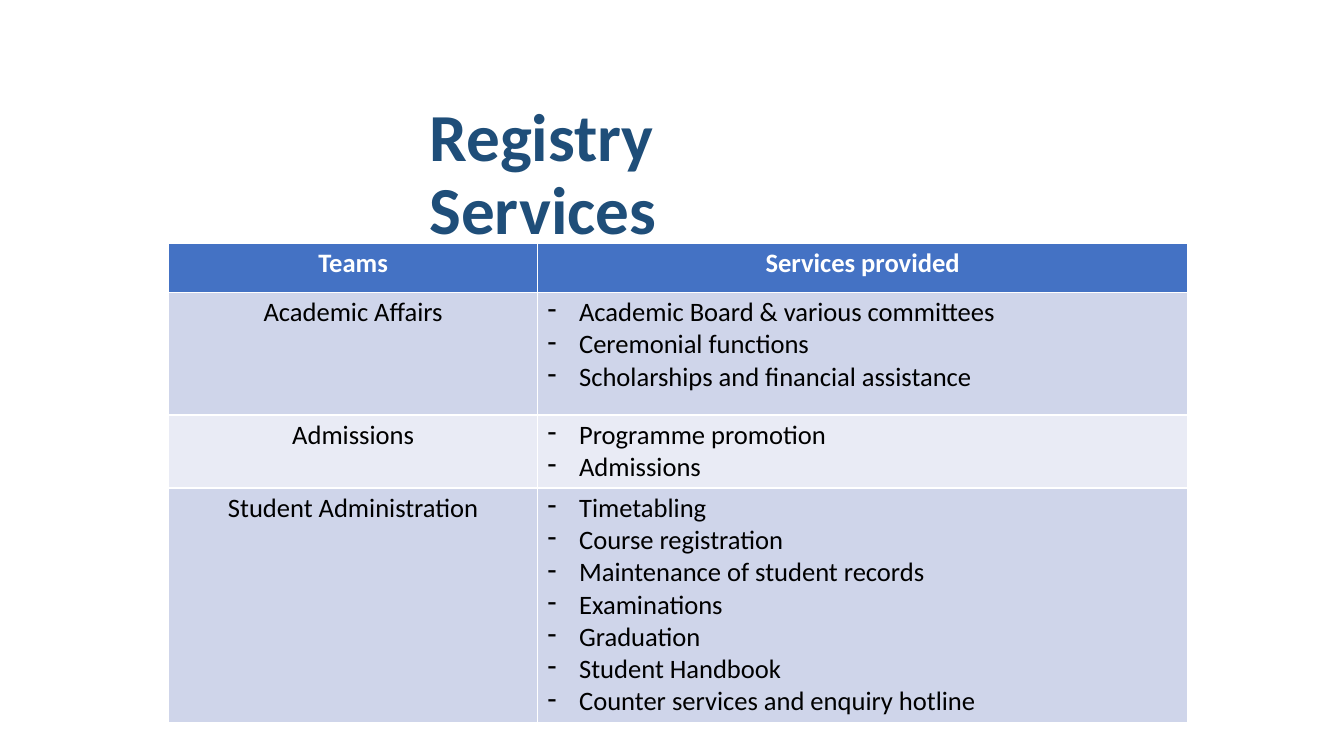
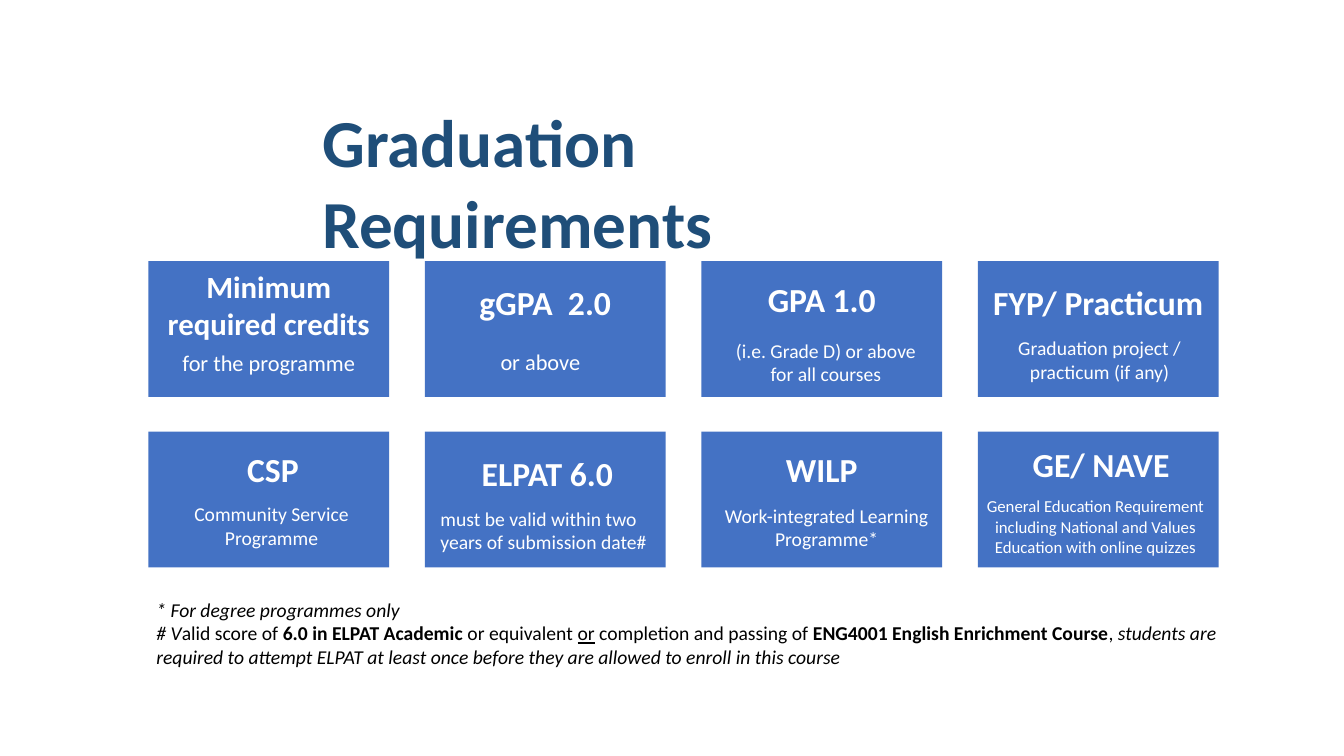
from lxml import etree
from pptx import Presentation
from pptx.dml.color import RGBColor
from pptx.enum.shapes import MSO_SHAPE
from pptx.enum.text import MSO_ANCHOR, MSO_AUTO_SIZE, PP_ALIGN
from pptx.oxml.ns import qn
from pptx.util import Pt

LEFT, CENTER = PP_ALIGN.LEFT, PP_ALIGN.CENTER
MIDDLE, TOP = MSO_ANCHOR.MIDDLE, MSO_ANCHOR.TOP
NO_FIT = MSO_AUTO_SIZE.NONE
RECTANGLE = MSO_SHAPE.RECTANGLE

FONT = "Calibri"
COLORS = {"title": "1F4E79", "blue": "4472C4", "white": "FFFFFF", "black": "000000",
          "band_dark": "CFD5EA", "band_light": "E9EBF5"}
TITLE_ONLY = 5

SERVICES_TITLE = {"text": "Registry Services", "place": (299.5, 92, 341.5, 67.7), "spacing": 0.9}
TABLE_PLACE = (120.5, 174, 728, 335)
COLUMN_WIDTHS = (263.5, 464.5)
ROW_HEIGHTS = (34.7, 87.8, 50.4, 162)
TABLE_HEADS = ("Teams", "Services provided")
TEAMS = [
    ("Academic Affairs", ["Academic Board & various committees", "Ceremonial functions",
                          "Scholarships and financial assistance"]),
    ("Admissions", ["Programme promotion", "Admissions"]),
    ("Student Administration", ["Timetabling", "Course registration",
                                "Maintenance of student records", "Examinations", "Graduation",
                                "Student Handbook", "Counter services and enquiry hotline"]),
]
BULLET_INDENT = 22.5

GRADUATION_TITLE = {"text": "Graduation Requirements", "place": (223, 85.7, 513.5, 87),
                    "spacing": 1.0}
CARD_COLUMNS = 4
CARD_WIDTH, CARD_HEIGHT = 172, 97
CARD_LEFT, CARD_TOP = 106, 186.5
CARD_STEP_X, CARD_STEP_Y = 197.5, 121.8
# head and note: text, size, shift from the card's centre, distance from the card's top, width
CARDS = [
    (("Minimum required credits", 22, 0, 1, 172), ("for the programme", 16, 0, 59.5, 160)),
    (("gGPA  2.0", 24, 0, 11, 160), ("or above", 16, -3.5, 58.5, 160)),
    (("GPA 1.0", 24, 0, 9, 160), ("(i.e. Grade D) or above for all courses", 14, 3, 52, 158)),
    (("FYP/ Practicum", 24, 0, 11, 172),
     ("Graduation project / practicum (if any)", 14, 1, 50, 139)),
    (("CSP", 24, 3, 9, 160), ("Community Service Programme", 14, 2, 47, 130)),
    (("ELPAT 6.0", 24, 1.5, 12, 160),
     ("must be valid within two years of submission date#", 14, 3.5, 50, 171)),
    (("WILP", 24, 0, 9, 160), ("Work-integrated Learning Programme*", 14, 3.5, 48, 163)),
    (("GE/ NAVE", 24, 2, 5.5, 160),
     ("General Education Requirement including National and Values Education "
      "with online quizzes", 12, -2, 42.5, 192)),
]
LEFT_ALIGNED_CARD = 5

FOOTNOTE_PLACE = (98, 423.5, 790, 58.5)
FOOTNOTE_INDENT = 13.7
ITALIC, BOLD, UNDERLINE = {"italic": True}, {"bold": True}, {"underline": True}
FOOTNOTES = [
    [("* For degree programmes only", ITALIC)],
    [("# V", ITALIC), ("alid score of ", {}), ("6.0 in ELPAT Academic ", BOLD),
     ("or equivalent ", {}), ("or", UNDERLINE), (" completion and passing of ", {}),
     ("ENG4001 English Enrichment Course", BOLD), (", ", {}),
     ("students are required to attempt ELPAT at least once before they are allowed "
      "to enroll in this course", ITALIC)],
]


def color(name):
    return RGBColor.from_string(COLORS[name])


def points(values):
    return [Pt(value) for value in values]


def add_span(para, text, size, color_name, **formats):
    span = para.add_run()
    span.text = text
    span.font.color.rgb = color(color_name)
    for name, value in {"name": FONT, "size": Pt(size), **formats}.items():
        setattr(span.font, name, value)


def paragraphs(frame, count):
    """Return the first paragraph of the frame and as many new ones as are needed."""
    return [frame.paragraphs[0]] + [frame.add_paragraph() for _ in range(count - 1)]


def add_page(deck, title):
    page = deck.slides.add_slide(deck.slide_layouts[TITLE_ONLY])
    box = page.shapes.title
    box.left, box.top, box.width, box.height = points(title["place"])
    frame = box.text_frame
    for name, value in {"word_wrap": True, "auto_size": NO_FIT, "vertical_anchor": MIDDLE}.items():
        setattr(frame, name, value)
    para = frame.paragraphs[0]
    para.alignment, para.line_spacing = LEFT, title["spacing"]
    add_span(para, title["text"], 48, "title", bold=True)
    return page


def add_text_box(page, place):
    frame = page.shapes.add_textbox(*points(place)).text_frame
    for name, value in {"word_wrap": True, "auto_size": NO_FIT, "vertical_anchor": TOP}.items():
        setattr(frame, name, value)
    return frame


def add_dash(para):
    properties = para._p.get_or_add_pPr()
    properties.set("marL", str(Pt(BULLET_INDENT)))
    properties.set("indent", str(-Pt(BULLET_INDENT)))
    etree.SubElement(properties, qn("a:buChar")).set("char", "-")


def fill_cell(cell, lines, fill, text_color, bold=False, dashes=False):
    cell.fill.solid()
    cell.fill.fore_color.rgb = color(fill)
    cell.margin_top = cell.margin_bottom = Pt(3)
    for para, line in zip(paragraphs(cell.text_frame, len(lines)), lines):
        para.alignment = LEFT if dashes else CENTER
        if dashes:
            add_dash(para)
        add_span(para, line, 19, text_color, bold=bold)


def build_services(deck):
    page = add_page(deck, SERVICES_TITLE)
    table = page.shapes.add_table(len(TEAMS) + 1, len(TABLE_HEADS), *points(TABLE_PLACE)).table
    for column, width in zip(table.columns, COLUMN_WIDTHS):
        column.width = Pt(width)
    for row, height in zip(table.rows, ROW_HEIGHTS):
        row.height = Pt(height)
    for index, head in enumerate(TABLE_HEADS):
        fill_cell(table.cell(0, index), [head], "blue", "white", bold=True)
    for index, (team, services) in enumerate(TEAMS, 1):
        band = "band_dark" if index % 2 else "band_light"
        fill_cell(table.cell(index, 0), [team], band, "black")
        fill_cell(table.cell(index, 1), services, band, "black", dashes=True)


def add_card(page, index, head, note):
    row, column = divmod(index, CARD_COLUMNS)
    left = CARD_LEFT + column * CARD_STEP_X
    top = CARD_TOP + row * CARD_STEP_Y
    card = page.shapes.add_shape(RECTANGLE, *points((left, top, CARD_WIDTH, CARD_HEIGHT)))
    card.shadow.inherit = False
    card.fill.solid()
    card.fill.fore_color.rgb = color("blue")
    card.line.fill.background()
    for part in (head, note):
        text, size, shift, drop, width = part
        text_left = left + (CARD_WIDTH - width) / 2 + shift
        height = CARD_HEIGHT - drop if part is note else note[3] - drop
        para = add_text_box(page, (text_left, top + drop, width, height)).paragraphs[0]
        para.alignment = LEFT if part is note and index == LEFT_ALIGNED_CARD else CENTER
        add_span(para, text, size, "white", bold=part is head)


def build_graduation(deck):
    page = add_page(deck, GRADUATION_TITLE)
    for index, (head, note) in enumerate(CARDS):
        add_card(page, index, head, note)
    frame = add_text_box(page, FOOTNOTE_PLACE)
    frame.margin_left = Pt(FOOTNOTE_INDENT)
    for para, spans in zip(paragraphs(frame, len(FOOTNOTES)), FOOTNOTES):
        for text, formats in spans:
            add_span(para, text, 14, "black", **formats)


def main():
    deck = Presentation()
    deck.slide_width, deck.slide_height = Pt(960), Pt(540)
    build_services(deck)
    build_graduation(deck)
    deck.save("out.pptx")


if __name__ == "__main__":
    main()
